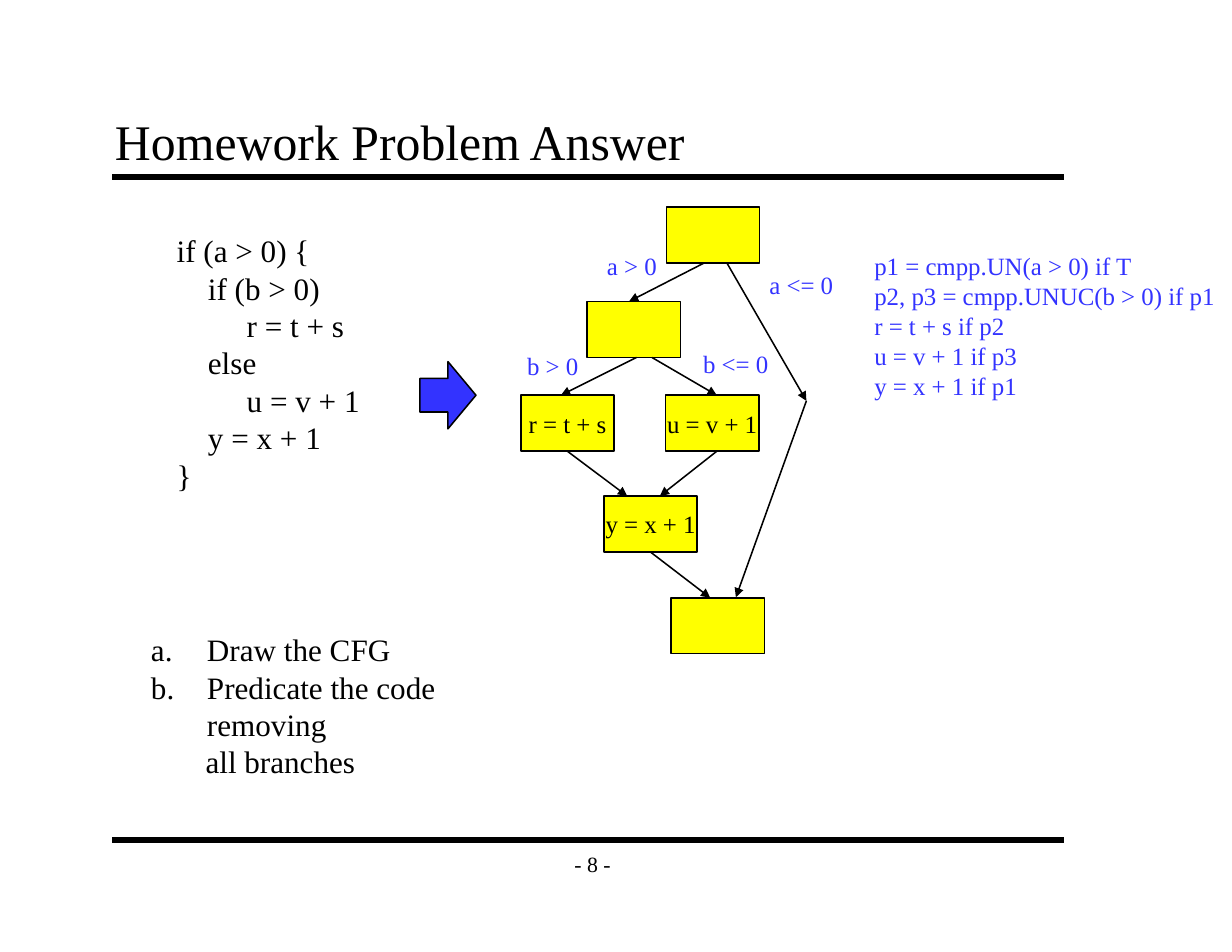
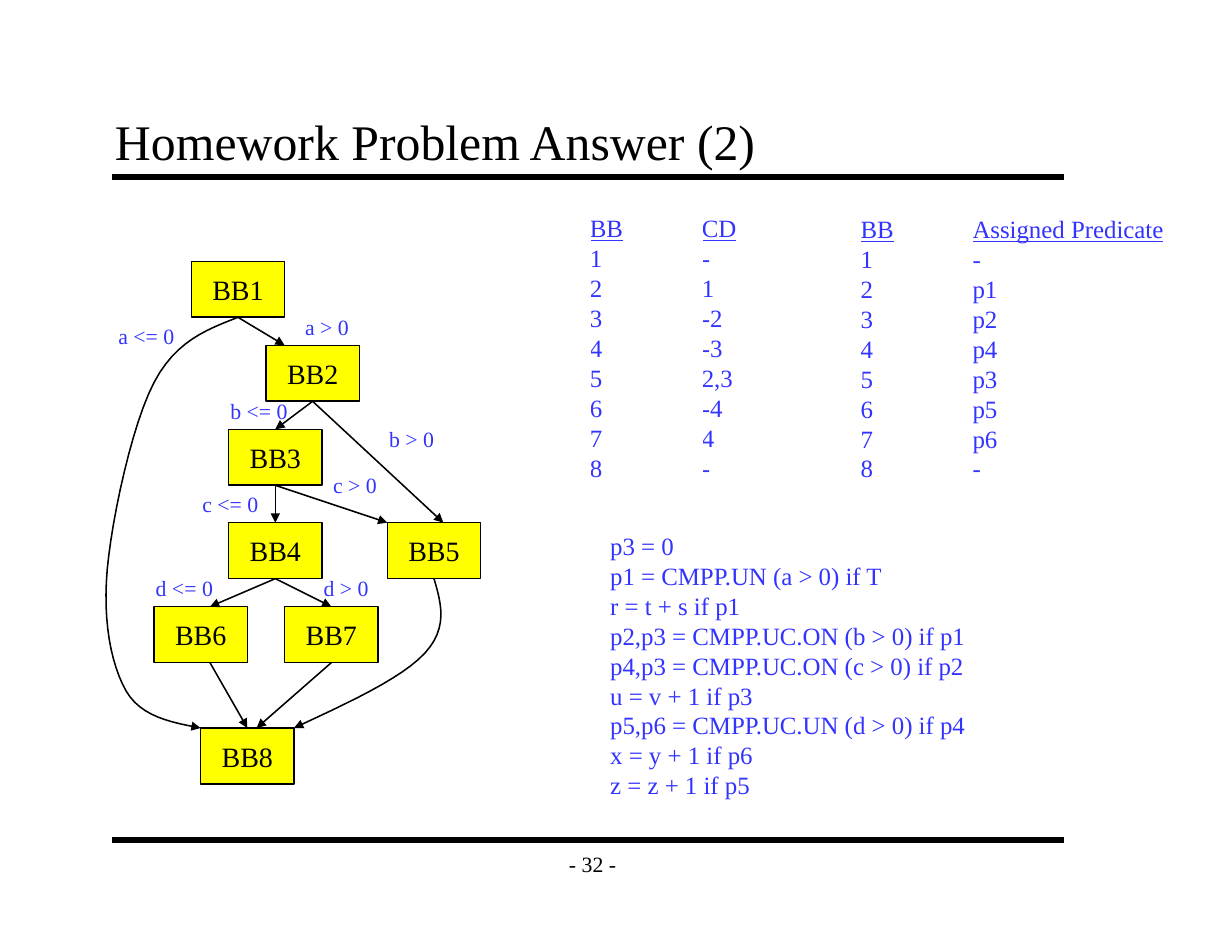
"""Build two homework answer slides with control flow graphs and predicated code."""
from lxml import etree
from pptx import Presentation
from pptx.dml.color import RGBColor
from pptx.enum.shapes import MSO_CONNECTOR, MSO_SHAPE
from pptx.enum.text import MSO_ANCHOR, PP_ALIGN
from pptx.oxml.ns import qn
from pptx.util import Inches, Pt

RECT, ARROW = MSO_SHAPE.RECTANGLE, MSO_SHAPE.RIGHT_ARROW
LINE = MSO_CONNECTOR.STRAIGHT
LEFT, MID = PP_ALIGN.LEFT, PP_ALIGN.CENTER
TOP, CENTER, BASE = MSO_ANCHOR.TOP, MSO_ANCHOR.MIDDLE, MSO_ANCHOR.BOTTOM
HUE = {"ink": "000000", "blue": "3333FF", "node": "FFFF00"}
FONT = "Times New Roman"
GRID = 24
NODE = (20, 12)
STEPS = 12


def unit(n):
    """Turn grid steps into a length."""
    return Inches(n / GRID)


def color(name):
    """Look up a colour by name."""
    return RGBColor.from_string(HUE[name])


def style(font, size, hue, under=False):
    """Set the font of a paragraph."""
    font.name, font.size, font.underline = FONT, Pt(size), under
    font.color.rgb = color(hue)


def write(frame, lines, size=16, hue="ink", align=LEFT, anchor=TOP,
          wrap=True, inset=(0.1, 0.05), dents=()):
    """Fill a text frame, one paragraph a line."""
    frame.word_wrap, frame.vertical_anchor = wrap, anchor
    frame.margin_left = frame.margin_right = Inches(inset[0])
    frame.margin_top = frame.margin_bottom = Inches(inset[1])
    for i, line in enumerate(lines):
        para = frame.add_paragraph() if i else frame.paragraphs[0]
        para.text, para.alignment = line, align
        style(para.font, size, hue)
        style(para.runs[0].font, size, hue)
        if dents:
            para._p.get_or_add_pPr().set("marL", str(unit(dents[i])))
    return frame


def text(slide, x, y, w, h, lines, **look):
    """Add a text box on the grid."""
    box = slide.shapes.add_textbox(unit(x), unit(y), unit(w), unit(h))
    return write(box.text_frame, lines, **look)


def letter(para):
    """Number a paragraph with a hanging letter."""
    props = para._p.get_or_add_pPr()
    props.set("indent", str(-unit(12)))
    etree.SubElement(props, qn("a:buAutoNum"), type="alphaLcPeriod")


def block(slide, kind, x, y, w, h, fill):
    """Add an outlined preset shape."""
    shape = slide.shapes.add_shape(kind, unit(x), unit(y), unit(w), unit(h))
    shape.shadow.inherit = False
    shape.fill.solid()
    shape.fill.fore_color.rgb = color(fill)
    ink(shape.line, 1)
    return shape


def ink(line, width, head=False):
    """Draw a line in black, with an arrowhead if asked."""
    line.color.rgb, line.width = color("ink"), Pt(width)
    if head:
        etree.SubElement(line._get_or_add_ln(), qn("a:tailEnd"), type="triangle")


def link(slide, start, end, width=1, head=True):
    """Join two grid points by a straight line."""
    wire = slide.shapes.add_connector(LINE, *map(unit, start + end))
    ink(wire.line, width, head)
    etree.SubElement(wire._element.spPr, qn("a:effectLst"))


def curve(slide, start, *parts):
    """Draw an arrow along cubic curves."""
    dots, here = [], start
    for a, b, end in parts:
        for step in range(1, STEPS + 1):
            t = step / STEPS
            s = 1 - t
            dots.append(tuple(
                unit(s**3 * p + 3 * s * s * t * q + 3 * s * t * t * r + t**3 * e)
                for p, q, r, e in zip(here, a, b, end)))
        here = end
    pen = slide.shapes.build_freeform(*map(unit, start))
    pen.add_line_segments(dots, close=False)
    shape = pen.convert_to_shape()
    shape.shadow.inherit = False
    shape.fill.background()
    ink(shape.line, 1, True)


def graph(slide, nodes, edges, size):
    """Draw nodes, then edges from bottom sides to top sides."""
    for x, y, name in nodes.values():
        shape = block(slide, RECT, x, y, *NODE, "node")
        if name:
            write(shape.text_frame, [name], size=size, align=MID,
                  anchor=CENTER, wrap=False)
    for src, out, dst, into in edges:
        x, y, _ = nodes[src]
        u, v, _ = nodes[dst]
        link(slide, (x + out, y + NODE[1]), (u + into, v))


def labels(slide, size, items):
    """Write the branch conditions."""
    for x, y, line in items:
        text(slide, x, y, 24, 8, [line], size=size, hue="blue")


def table(slide, x, y, wide, rows):
    """Add a plain two-column table with an underlined head."""
    high = 6.4
    frame = slide.shapes.add_table(len(rows), 2, unit(x), unit(y),
                                   unit(sum(wide)), unit(high * len(rows)))
    grid = frame.table
    grid.first_row = grid.horz_banding = False
    for col, w in zip(grid.columns, wide):
        col.width = unit(w)
    for i, row in enumerate(rows):
        grid.rows[i].height = unit(high)
        for j, word in enumerate(row):
            cell = grid.cell(i, j)
            cell.fill.background()
            cell.margin_left = cell.margin_right = 0
            cell.margin_top = cell.margin_bottom = 0
            para = cell.text_frame.paragraphs[0]
            para.text = word
            style(para.runs[0].font, 16, "blue", i == 0)


def base(deck, title, page):
    """Add a slide with its title, two rules and page number."""
    slide = deck.slides.add_slide(deck.slide_layouts[6])
    for y in (38, 180):
        link(slide, (24, y), (228, y), 4, False)
    text(slide, 22, 22, 212, 16, [title], size=32, anchor=BASE, inset=(0.11, 0.06))
    text(slide, 118, 180, 18, 10, [f"- {page} -"], size=14, align=MID,
         anchor=CENTER, wrap=False, inset=(0.11, 0.06))
    return slide


def nested(deck):
    """Build the slide on the nested condition."""
    slide = base(deck, "Homework Problem Answer", 8)
    code = ["if (a > 0) {", "if (b > 0)", "r = t + s", "else", "u = v + 1",
            "y = x + 1", "}"]
    text(slide, 35.5, 48.5, 44, 58, code, size=20, dents=(0, 6.7, 15, 6.7, 15, 6.7, 0))
    tasks = text(slide, 30, 134, 72, 26.4,
                 ["Draw the CFG", "Predicate the code removing", "all branches"],
                 size=20, dents=(12, 12, 11.7))
    for para in tasks.paragraphs[:2]:
        letter(para)
    nodes = {"top": (142.8, 44.4, ""), "test": (125.8, 64.6, ""),
             "yes": (111.6, 84.7, "r = t + s"), "no": (142.6, 84.7, "u = v + 1"),
             "join": (129.4, 106.3, "y = x + 1"), "end": (143.8, 128.1, "")}
    edges = [("top", 8, "test", 9), ("test", 10.6, "yes", 8.6),
             ("test", 13.9, "no", 11), ("yes", 10, "join", 5),
             ("no", 11, "join", 12), ("join", 10, "end", 8.4)]
    graph(slide, nodes, edges, 16)
    bend = (172.8, 85.9)
    link(slide, (155.8, 56.4), bend)
    link(slide, bend, (157.7, 128))
    labels(slide, 16, [(110.6, 73.9, "b > 0"), (148.3, 73.5, "b <= 0"),
                       (127.7, 52.6, "a > 0"), (162.5, 56.6, "a <= 0")])
    block(slide, ARROW, 90, 77.5, 12, 14.4, "blue")
    text(slide, 185, 52.6, 78.9, 34.8,
         ["p1 = cmpp.UN(a > 0) if T", "p2, p3 = cmpp.UNUC(b > 0) if p1",
          "r = t + s if p2", "u = v + 1 if p3", "y = x + 1 if p1"], hue="blue")


def blocks(deck):
    """Build the slide on the eight basic blocks."""
    slide = base(deck, "Homework Problem Answer (2)", 32)
    spots = [(41, 56), (57, 74), (49, 92), (49, 112), (83, 112), (33, 130),
             (61, 130), (43, 156)]
    nodes = {i: (x, y, f"BB{i}") for i, (x, y) in enumerate(spots, 1)}
    edges = [(1, 10, 2, 4), (2, 10, 3, 10), (2, 10, 5, 12), (3, 10, 4, 10),
             (3, 10, 5, 0), (4, 10, 6, 12), (4, 10, 7, 10), (6, 12, 8, 10),
             (7, 10, 8, 12)]
    graph(slide, nodes, edges, 18)
    curve(slide, (51, 68), ((44.4, 70.6), (37.7, 73), (33, 82)),
          ((28.3, 91), (24, 111), (23, 122)),
          ((22, 133), (23.8, 142.3), (27, 148)),
          ((30.2, 153.6), (36.7, 154.8), (43, 156)))
    curve(slide, (93, 124), ((94.6, 129.4), (96, 134.6), (91, 140)),
          ((86, 145.4), (74.4, 150.7), (63, 156)))
    labels(slide, 14, [(23, 68, "a <= 0"), (63, 66, "a > 0"), (81, 90, "b > 0"),
                       (47, 84, "b <= 0"), (41, 104, "c <= 0"), (69, 100, "c > 0"),
                       (67, 122, "d > 0"), (31, 122, "d <= 0")])
    needs = ["-", "1", "-2", "-3", "2,3", "-4", "4", "-"]
    preds = ["-", "p1", "p2", "p4", "p3", "p5", "p6", "-"]
    for x, y, wide, head, words in ((126.4, 46.2, 12, "CD", needs),
                                    (184.4, 46.4, 44, "Assigned Predicate", preds)):
        rows = [("BB", head)] + [(str(i), word) for i, word in enumerate(words, 1)]
        table(slide, x, y, (24, wide), rows)
    text(slide, 128.4, 112.6, 81.6, 60.2,
         ["p3 = 0", "p1 = CMPP.UN (a > 0) if T", "r = t + s if p1",
          "p2,p3 = CMPP.UC.ON (b > 0) if p1", "p4,p3 = CMPP.UC.ON (c > 0) if p2",
          "u = v + 1 if p3", "p5,p6 = CMPP.UC.UN (d > 0) if p4",
          "x = y + 1 if p6", "z = z + 1 if p5"], hue="blue")


def main():
    """Make the deck and save it."""
    deck = Presentation()
    deck.slide_width, deck.slide_height = Inches(11), Inches(8.5)
    nested(deck)
    blocks(deck)
    deck.save("out.pptx")


if __name__ == "__main__":
    main()
